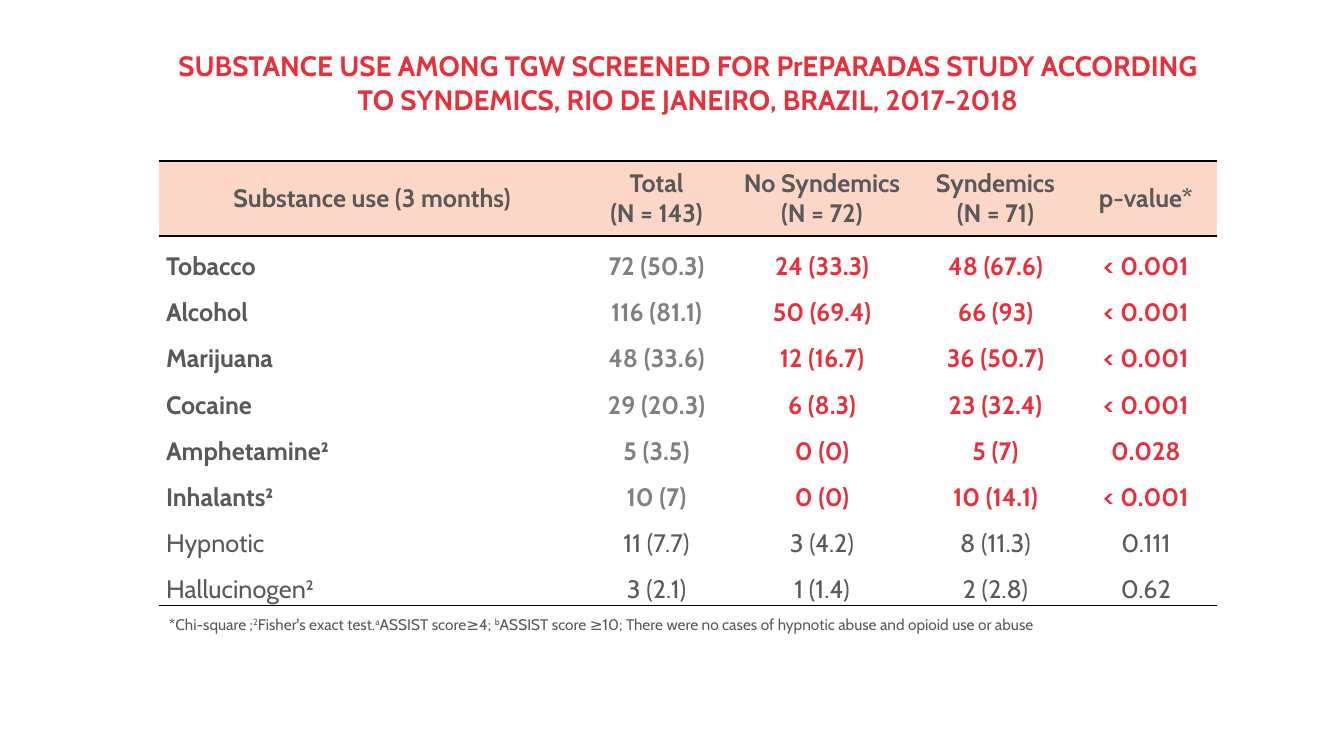
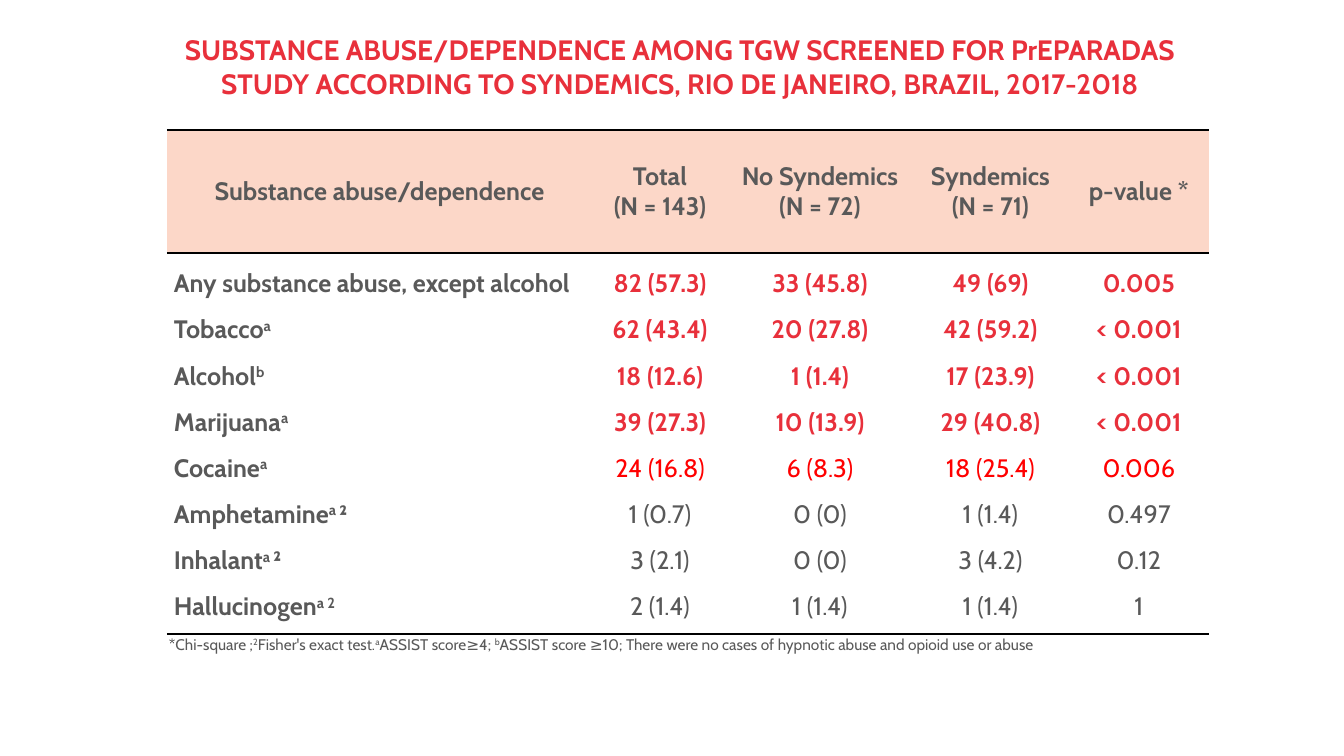
import dataclasses

import lxml.etree
import pptx
import pptx.dml.color
import pptx.enum.text
import pptx.oxml.ns
import pptx.util

PX = 914400 / 100.8


@dataclasses.dataclass(frozen=True)
class Theme:
    font: str = "Cabin"
    red: str = "E8303B"
    bright_red: str = "FF0000"
    ink: str = "595959"
    soft: str = "808080"
    black: str = "000000"
    band: str = "FCD7C8"
    title_size: int = 20
    table_size: int = 18
    note_size: int = 11


THEME = Theme()
SLIDE_SIZE = (1344, 756)
ROW_HEIGHT = 46
HEAD_INSET = 5
BODY_INSET = 7

ROW_STYLES = {
    "significant": dict(label_bold=True, bold=True, total=THEME.soft, rest=THEME.red),
    "plain": dict(label_bold=False, bold=False, total=THEME.ink, rest=THEME.ink),
    "all red": dict(label_bold=True, bold=True, total=THEME.red, rest=THEME.red),
    "light red": dict(label_bold=True, bold=False, total=THEME.bright_red, rest=THEME.bright_red),
    "bold label": dict(label_bold=True, bold=False, total=THEME.ink, rest=THEME.ink),
}

GROUPS = ("Total\n(N = 143)", "No Syndemics\n(N = 72)", "Syndemics\n(N = 71)")
NOTE = (
    "Chi-square ;^2^Fisher's exact test.^a^ASSIST score≥4; ^b^ASSIST score ≥10; "
    "There were no cases of hypnotic abuse and opioid use or abuse"
)

PAGES = [
    {
        "title": "SUBSTANCE USE AMONG TGW SCREENED FOR PrEPARADAS STUDY ACCORDING "
                 "TO SYNDEMICS, RIO DE JANEIRO, BRAZIL, 2017-2018",
        "title_box": (150, 24, 1076, 116),
        "table_at": (159, 161),
        "columns": (426, 143, 188, 159, 142),
        "head_height": 75,
        "last_height": ROW_HEIGHT,
        "note_box": (159, 610, 1058, 62),
        "head": ("Substance use (3 months)", *GROUPS, "p-value*"),
        "rows": [
            ("significant", "Tobacco", "72 (50.3)", "24 (33.3)", "48 (67.6)", "< 0.001"),
            ("significant", "Alcohol", "116 (81.1)", "50 (69.4)", "66 (93)", "< 0.001"),
            ("significant", "Marijuana", "48 (33.6)", "12 (16.7)", "36 (50.7)", "< 0.001"),
            ("significant", "Cocaine", "29 (20.3)", "6 (8.3)", "23 (32.4)", "< 0.001"),
            ("significant", "Amphetamine²", "5 (3.5)", "0 (0)", "5 (7)", "0.028"),
            ("significant", "Inhalants²", "10 (7)", "0 (0)", "10 (14.1)", "< 0.001"),
            ("plain", "Hypnotic", "11 (7.7)", "3 (4.2)", "8 (11.3)", "0.111"),
            ("plain", "Hallucinogen²", "3 (2.1)", "1 (1.4)", "2 (2.8)", "0.62"),
        ],
    },
    {
        "title": "SUBSTANCE ABUSE/DEPENDENCE AMONG TGW SCREENED FOR PrEPARADAS "
                 "STUDY ACCORDING TO SYNDEMICS, RIO DE JANEIRO, BRAZIL, 2017-2018",
        "title_box": (151, 3, 1058, 126),
        "table_at": (167, 130),
        "columns": (425, 136, 184, 157, 140),
        "head_height": 123,
        "last_height": 58,
        "note_box": (159, 630, 1058, 62),
        "head": ("Substance abuse/dependence", *GROUPS, "p-value *"),
        "rows": [
            ("all red", "Any substance abuse, except alcohol", "82 (57.3)", "33 (45.8)", "49 (69)", "0.005"),
            ("all red", "Tobacco^a^", "62 (43.4)", "20 (27.8)", "42 (59.2)", "< 0.001"),
            ("all red", "Alcohol^b^", "18 (12.6)", "1 (1.4)", "17 (23.9)", "< 0.001"),
            ("all red", "Marijuana^a^", "39 (27.3)", "10 (13.9)", "29 (40.8)", "< 0.001"),
            ("light red", "Cocaine^a^", "24 (16.8)", "6 (8.3)", "18 (25.4)", "0.006"),
            ("bold label", "Amphetamine^a ^²", "1 (0.7)", "0 (0)", "1 (1.4)", "0.497"),
            ("bold label", "Inhalant^a ^²", "3 (2.1)", "0 (0)", "3 (4.2)", "0.12"),
            ("bold label", "Hallucinogen^a 2^", "2 (1.4)", "1 (1.4)", "1 (1.4)", "1"),
        ],
    },
]


def px(length):
    return pptx.util.Emu(round(length * PX))


def box_of(lengths):
    return [px(length) for length in lengths]


def style(span, size, color, bold=False):
    span.font.name = THEME.font
    span.font.size = pptx.util.Pt(size)
    span.font.bold = bold
    span.font.color.rgb = pptx.dml.color.RGBColor.from_string(color)


def add_marked_text(para, text, size, color, bold=False):
    for index, part in enumerate(text.split("^")):
        if part:
            span = para.add_run()
            span.text = part
            style(span, size, color, bold)
            if index % 2:
                span._r.get_or_add_rPr().set("baseline", "30000")


def set_borders(cell, top, bottom):
    properties = cell._tc.get_or_add_tcPr()
    for side, shown in (("L", False), ("R", False), ("T", top), ("B", bottom)):
        line = lxml.etree.SubElement(properties, pptx.oxml.ns.qn(f"a:ln{side}"))
        line.set("w", str(pptx.util.Pt(1) if shown else 0))
        fill = lxml.etree.SubElement(line, pptx.oxml.ns.qn("a:solidFill" if shown else "a:noFill"))
        if shown:
            lxml.etree.SubElement(fill, pptx.oxml.ns.qn("a:srgbClr")).set("val", THEME.black)


def prepare_cell(cell, inset, anchor):
    cell.margin_left = cell.margin_right = px(inset)
    cell.margin_top = cell.margin_bottom = 0
    cell.vertical_anchor = anchor


def fill_head(cell, text):
    prepare_cell(cell, HEAD_INSET, pptx.enum.text.MSO_ANCHOR.MIDDLE)
    set_borders(cell, True, True)
    cell.fill.solid()
    cell.fill.fore_color.rgb = pptx.dml.color.RGBColor.from_string(THEME.band)
    cell.text_frame.text = text
    for para in cell.text_frame.paragraphs:
        para.alignment = pptx.enum.text.PP_ALIGN.CENTER
        for span in para.runs:
            style(span, THEME.table_size, THEME.ink, True)


def fill_body(cell, text, column, look, first, last):
    prepare_cell(cell, BODY_INSET, pptx.enum.text.MSO_ANCHOR.TOP)
    set_borders(cell, first, last)
    cell.fill.background()
    para = cell.text_frame.paragraphs[0]
    para.line_spacing = 1.5
    if column == 0:
        color, bold = THEME.ink, look["label_bold"]
        para.alignment = pptx.enum.text.PP_ALIGN.LEFT
    else:
        color, bold = look["total" if column == 1 else "rest"], look["bold"]
        para.alignment = pptx.enum.text.PP_ALIGN.CENTER
    add_marked_text(para, text, THEME.table_size, color, bold)


def add_title(page, content):
    title = page.shapes.title
    title.left, title.top, title.width, title.height = box_of(content["title_box"])
    frame = title.text_frame
    frame.text = content["title"]
    frame.word_wrap = True
    frame.auto_size = pptx.enum.text.MSO_AUTO_SIZE.NONE
    frame.vertical_anchor = pptx.enum.text.MSO_ANCHOR.MIDDLE
    para = frame.paragraphs[0]
    para.alignment = pptx.enum.text.PP_ALIGN.CENTER
    style(para.runs[0], THEME.title_size, THEME.red, True)


def add_results(page, content):
    rows, columns = content["rows"], content["columns"]
    heights = [content["head_height"], *[ROW_HEIGHT] * (len(rows) - 1), content["last_height"]]
    bounds = (*content["table_at"], sum(columns), sum(heights))
    table = page.shapes.add_table(len(heights), len(columns), *box_of(bounds)).table
    table.first_row = table.horz_banding = False
    for column, width in zip(table.columns, columns):
        column.width = px(width)
    for row, height in zip(table.rows, heights):
        row.height = px(height)
    for column, text in enumerate(content["head"]):
        fill_head(table.cell(0, column), text)
    for number, (look, *texts) in enumerate(rows, 1):
        for column, text in enumerate(texts):
            fill_body(table.cell(number, column), text, column, ROW_STYLES[look],
                      number == 1, number == len(rows))


def add_note(page, content):
    frame = page.shapes.add_textbox(*box_of(content["note_box"])).text_frame
    frame.word_wrap = True
    para = frame.paragraphs[0]
    add_marked_text(para, "*", THEME.note_size, THEME.black)
    add_marked_text(para, NOTE, THEME.note_size, THEME.ink)


def main():
    deck = pptx.Presentation()
    deck.slide_width, deck.slide_height = box_of(SLIDE_SIZE)
    for content in PAGES:
        page = deck.slides.add_slide(deck.slide_layouts.get_by_name("Title Only"))
        add_title(page, content)
        add_results(page, content)
        add_note(page, content)
    deck.save("out.pptx")


if __name__ == "__main__":
    main()
